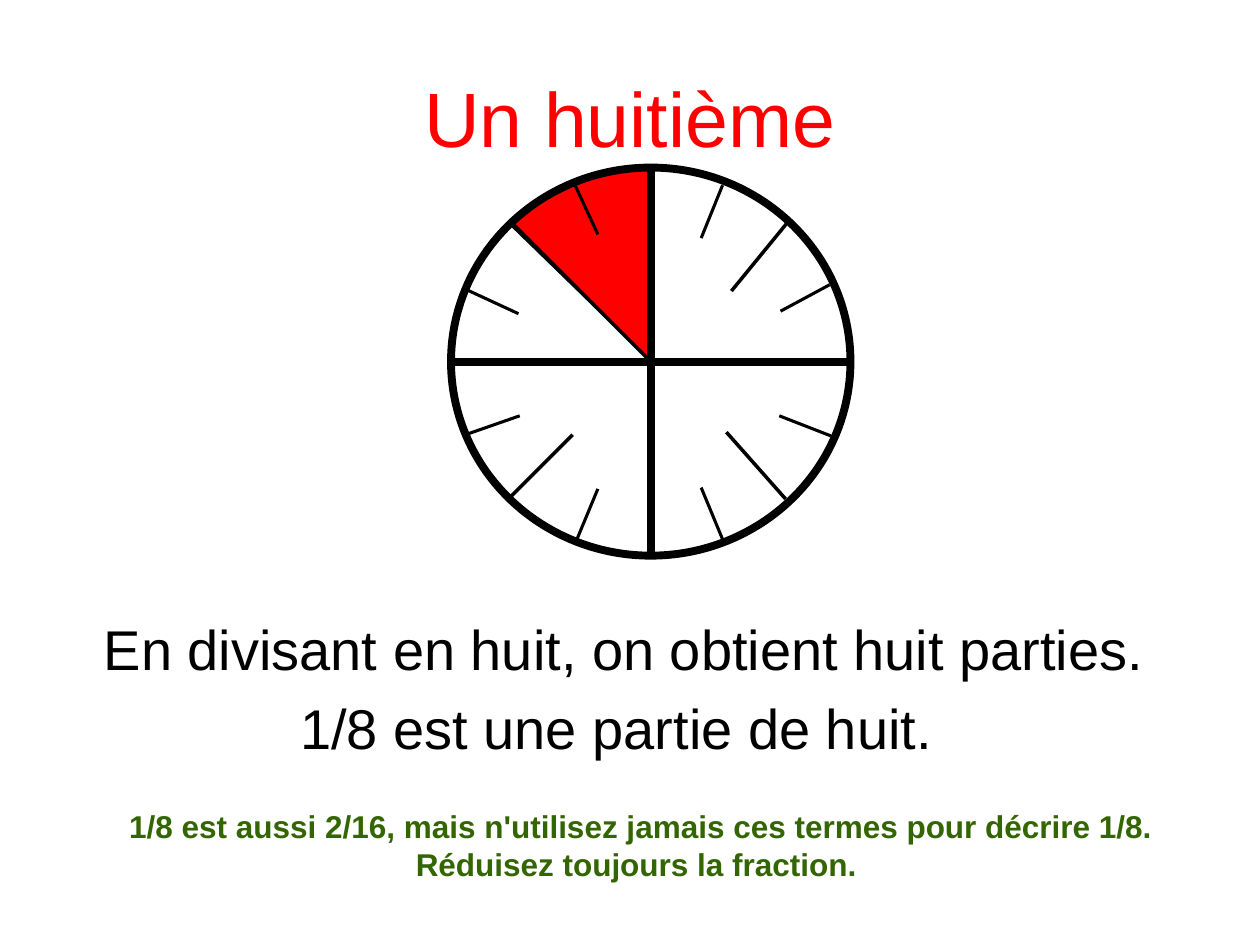
from math import cos, pi, sin

from lxml.etree import SubElement
from pptx import Presentation
from pptx.dml.color import RGBColor
from pptx.enum.shapes import MSO_CONNECTOR, MSO_SHAPE
from pptx.enum.text import MSO_ANCHOR, MSO_AUTO_SIZE, PP_ALIGN
from pptx.oxml.ns import qn
from pptx.util import Inches, Pt

BLACK, RED, GREEN = "000000", "FF0000", "336600"
TICKS = [
    ((-0.42, 1.01), (-0.59, 1.42), 1.75),
    ((0.57, -1.4), (0.4, -0.98), 1.75),
    ((-0.42, -1.01), (-0.61, -1.42), 1.75),
    ((0.4, 1), (0.57, 1.41), 1.75),
    ((-1.04, 0.43), (-1.47, 0.58), 1.75),
    ((1.43, 0.59), (1.02, 0.43), 1.75),
    ((-1.05, -0.38), (-1.46, -0.57), 1.75),
    ((1.42, -0.61), (1.03, -0.4), 1.75),
    ((-0.62, 0.58), (-1.12, 1.08), 2),
    ((0.6, 0.56), (1.07, 1.09), 2),
    ((0.64, -0.56), (1.09, -1.11), 2),
]


def color(hex_string):
    return RGBColor.from_string(hex_string)


def place(shape, box):
    shape.left, shape.top, shape.width, shape.height = map(Inches, box)


def write(frame, lines, size, hex_string, bold=False):
    frame.text = "\n".join(lines)
    frame.word_wrap = True
    frame.auto_size = MSO_AUTO_SIZE.NONE
    for paragraph in frame.paragraphs:
        paragraph.alignment = PP_ALIGN.CENTER
        for run in paragraph.runs:
            run.font.name = "Arial"
            run.font.size = Pt(size)
            run.font.bold = bold
            run.font.color.rgb = color(hex_string)


def outline(shape, width):
    shape.line.color.rgb = color(BLACK)
    shape.line.width = Pt(width)


def add_title(slide, box):
    title = slide.shapes.title
    place(title, box)
    write(title.text_frame, ["Un huitième"], 44, RED)
    title.text_frame.vertical_anchor = MSO_ANCHOR.MIDDLE


def add_explanation(slide, box):
    body = slide.placeholders[1]
    place(body, box)
    lines = [
        " En divisant en huit, on obtient huit parties. ",
        "1/8 est une partie de huit. ",
    ]
    write(body.text_frame, lines, 32, BLACK)
    for paragraph in body.text_frame.paragraphs:
        paragraph.space_before = Pt(6.4)
        properties = paragraph._p.get_or_add_pPr()
        properties.set("marL", str(Inches(0.38)))
        properties.set("indent", str(Inches(-0.38)))
        SubElement(properties, qn("a:buNone"))


def add_fraction_circle(slide, box):
    left, top, width, height = box
    radius_x, radius_y = width / 2, height / 2
    center_x, center_y = left + radius_x, top + radius_y

    def add_line(start, end, weight):
        line = slide.shapes.add_connector(
            MSO_CONNECTOR.STRAIGHT,
            Inches(center_x + start[0]), Inches(center_y + start[1]),
            Inches(center_x + end[0]), Inches(center_y + end[1]))
        outline(line, weight)
        SubElement(line._element.spPr, qn("a:effectLst"))

    steps = 24
    angles = [pi / 2 + pi / 4 * step / steps for step in range(steps + 1)]
    arc = [(Inches(center_x + radius_x * cos(angle)),
            Inches(center_y - radius_y * sin(angle))) for angle in angles]
    builder = slide.shapes.build_freeform(Inches(center_x), Inches(center_y))
    builder.add_line_segments(arc, close=True)
    eighth = builder.convert_to_shape()
    eighth.shadow.inherit = False
    eighth.fill.solid()
    eighth.fill.fore_color.rgb = color(RED)
    outline(eighth, 0.75)

    circle = slide.shapes.add_shape(MSO_SHAPE.OVAL, *map(Inches, box))
    circle.shadow.inherit = False
    circle.fill.background()
    outline(circle, 4.5)

    add_line((0, -radius_y), (0, radius_y), 4.5)
    add_line((-radius_x, 0), (radius_x, 0), 4.5)
    add_line((-1.09, -1.09), (0, 0), 2)
    for start, end, weight in TICKS:
        add_line(start, end, weight)


def add_note(slide, box):
    note = slide.shapes.add_textbox(*map(Inches, box))
    text = ("1/8 est aussi 2/16, mais n'utilisez jamais ces termes pour "
            "décrire 1/8. Réduisez toujours la fraction. ")
    write(note.text_frame, [text], 18, GREEN, bold=True)


def main():
    deck = Presentation()
    deck.slide_width, deck.slide_height = Inches(10), Inches(7.5)
    slide = deck.slides.add_slide(deck.slide_layouts[1])
    add_title(slide, (0.5, 0.3, 9, 1.25))
    add_explanation(slide, (0.58, 4.83, 8.75, 2.03))
    add_fraction_circle(slide, (3.58, 1.33, 3.17, 3.08))
    add_note(slide, (0.75, 6.36, 8.67, 0.7))
    deck.save("out.pptx")


if __name__ == "__main__":
    main()
